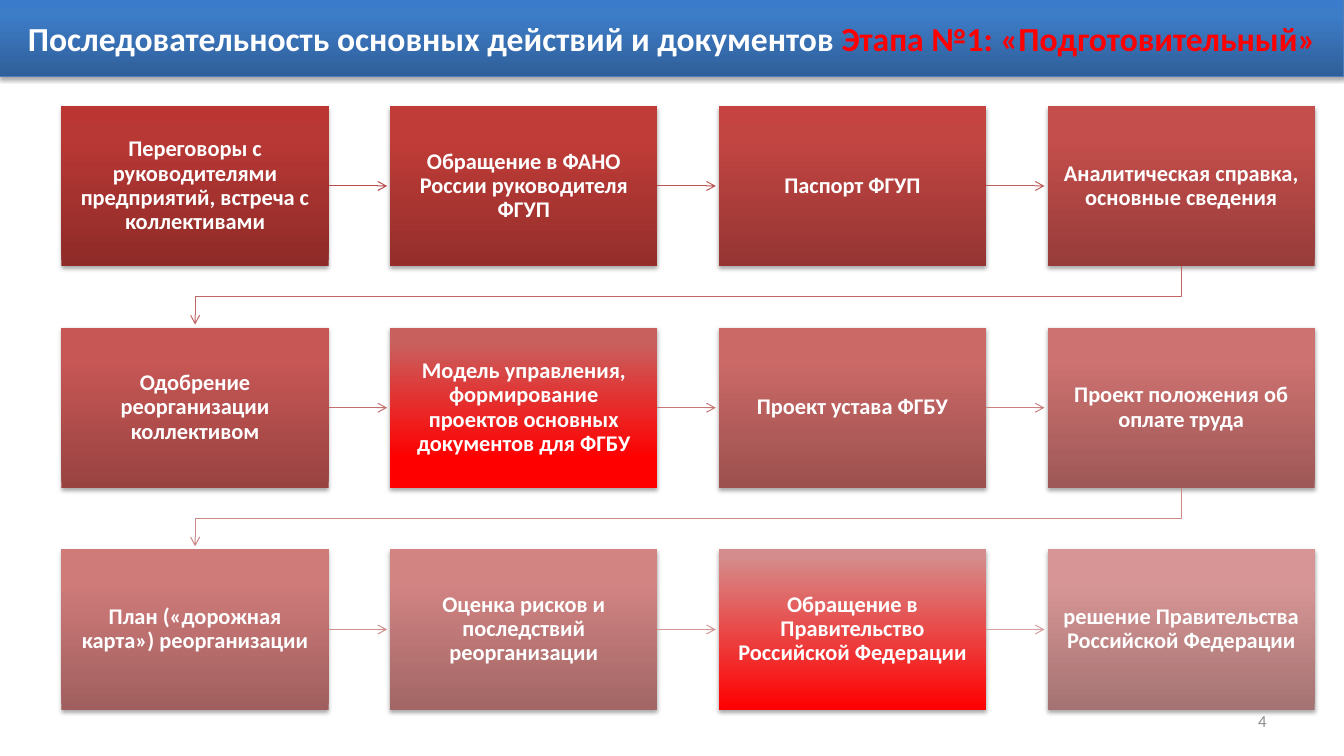
from lxml import etree
from pptx import Presentation, util as u
from pptx.dml.color import RGBColor
from pptx.enum import shapes, text
from pptx.oxml.ns import qn

COLORS = {"white": "FFFFFF", "accent": "FF0000", "border": "4B7EBC",
          "number": "8C8C8C", "shadow": "000000"}
HEADING = [("Последовательность основных действий и документов ", "white"),
           ("Этапа №1: «Подготовительный»", "accent")]
HEADING_FILL = [(0, "2F5F99"), (80, "3D7CC7"), (100, "3A7CCB")]
PAGE_NUMBER = "4"

STEPS = [
    ("Переговоры с руководителями предприятий, встреча с коллективами",
     [(0, "8E2B28"), (80, "B83835"), (100, "BB3632")], "B74C4A"),
    ("Обращение в ФАНО России руководителя ФГУП",
     [(0, "942E2B"), (80, "C03C38"), (100, "C33936")], "BA5552"),
    ("Паспорт ФГУП",
     [(0, "953533"), (80, "C24542"), (100, "C54340")], "BD5E5B"),
    ("Аналитическая справка, основные сведения",
     [(0, "973C3A"), (80, "C44E4B"), (100, "C74C49")], "C06664"),
    ("Одобрение реорганизации коллективом",
     [(0, "994341"), (80, "C65755"), (100, "C95553")], "C36F6D"),
    ("Модель управления, формирование проектов основных документов для ФГБУ",
     [(18, COLORS["accent"]), (91, "C8605E"), (100, "CB5F5C")], "C67776"),
    ("Проект устава ФГБУ",
     [(0, "9C514F"), (80, "CB6967"), (100, "CD6866")], "C9807E"),
    ("Проект положения об оплате труда",
     [(0, "9E5857"), (80, "CD7270"), (100, "D0716F")], "CC8887"),
    ("План («дорожная карта») реорганизации",
     [(0, "A05F5E"), (80, "CF7B7A"), (100, "D27A79")], "CF9190"),
    ("Оценка рисков и последствий реорганизации",
     [(0, "A16665"), (80, "D28483"), (100, "D48382")], "D29998"),
    ("Обращение в Правительство Российской Федерации",
     [(0, COLORS["accent"]), (96, "D48D8C"), (100, "D68C8B")], "D6A1A1"),
    ("решение Правительства Российской Федерации",
     [(0, "A57373"), (80, "D79695"), (100, "D99594")], None),
]

WIDTH, HEIGHT = 13.33, 7.5
COLUMNS = 4
LEFT, TOP = 0.61, 1.05
BOX_W, BOX_H = 2.65, 1.59
STEP_X, STEP_Y = 3.26, 2.2
GAP_X, GAP_Y = STEP_X - BOX_W, STEP_Y - BOX_H
ARROW_CLEARANCE = 0.03

deck = Presentation()
deck.slide_width, deck.slide_height = u.Inches(WIDTH), u.Inches(HEIGHT)
slide = deck.slides.add_slide(deck.slide_layouts[6])


def inches(*values):
    return [u.Inches(value) for value in values]


def write(holder, runs, size, bold, align, inset=None, spacing=None):
    frame = holder.text_frame
    frame.word_wrap = True
    frame.vertical_anchor = text.MSO_ANCHOR.MIDDLE
    if inset is not None:
        frame.margin_left = frame.margin_right = u.Inches(inset)
        frame.margin_top = frame.margin_bottom = u.Inches(inset)
    paragraph = frame.paragraphs[0]
    paragraph.alignment = align
    if spacing:
        paragraph.line_spacing = spacing
    for words, color in runs:
        run = paragraph.add_run()
        run.text = words
        run.font.name, run.font.size, run.font.bold = "Calibri", u.Pt(size), bold
        run.font.color.rgb = RGBColor.from_string(COLORS[color])


def add_panel(place, stops):
    panel = slide.shapes.add_shape(shapes.MSO_SHAPE.RECTANGLE, *inches(*place))
    panel.fill.gradient()
    panel.fill.gradient_angle = 90
    panel.line.fill.background()
    panel.shadow.inherit = False
    properties = panel.element.spPr
    stop_list = properties.find(qn("a:gradFill")).find(qn("a:gsLst"))
    for stop in list(stop_list):
        stop_list.remove(stop)
    for position, color in stops:
        stop = etree.SubElement(stop_list, qn("a:gs"), pos=str(position * 1000))
        etree.SubElement(stop, qn("a:srgbClr"), val=color)
    shadow = etree.SubElement(properties.find(qn("a:effectLst")), qn("a:outerShdw"),
                              blurRad=str(u.Pt(3.1)), dist=str(u.Pt(1.8)),
                              dir="5400000", rotWithShape="0")
    tint = etree.SubElement(shadow, qn("a:srgbClr"), val=COLORS["shadow"])
    etree.SubElement(tint, qn("a:alpha"), val="35000")
    return panel


def style_arrow(arrow, color):
    arrow.line.color.rgb = RGBColor.from_string(color)
    arrow.line.width = u.Pt(0.75)
    properties = arrow.element.spPr
    etree.SubElement(properties.find(qn("a:ln")), qn("a:tailEnd"), type="arrow")
    etree.SubElement(properties, qn("a:effectLst"))


def add_next_arrow(box, x, y, color):
    start, middle = x + BOX_W, y + BOX_H / 2
    arrow = slide.shapes.add_connector(
        shapes.MSO_CONNECTOR.STRAIGHT,
        *inches(start, middle, start + GAP_X - ARROW_CLEARANCE, middle))
    arrow.begin_connect(box, 3)
    style_arrow(arrow, color)


def add_return_arrow(x, y, color):
    start, end = x + BOX_W / 2, LEFT + BOX_W / 2
    bottom = y + BOX_H
    bend, tip = bottom + GAP_Y / 2, bottom + GAP_Y - ARROW_CLEARANCE
    outline = slide.shapes.build_freeform(*inches(start, bottom))
    outline.add_line_segments(
        [inches(start, bend), inches(end, bend), inches(end, tip)], close=False)
    arrow = outline.convert_to_shape()
    arrow.fill.background()
    style_arrow(arrow, color)


heading = add_panel((0, 0, WIDTH, 0.76), HEADING_FILL)
heading.line.color.rgb = RGBColor.from_string(COLORS["border"])
heading.line.width = u.Pt(0.75)
write(heading, HEADING, 24, True, text.PP_ALIGN.CENTER)

for index, (action, stops, arrow_color) in enumerate(STEPS):
    row, column = divmod(index, COLUMNS)
    x, y = LEFT + column * STEP_X, TOP + row * STEP_Y
    box = add_panel((x, y, BOX_W, BOX_H), stops)
    write(box, [(action, "white")], 16, True, text.PP_ALIGN.CENTER, 0.12, 0.9)
    if arrow_color and column < COLUMNS - 1:
        add_next_arrow(box, x, y, arrow_color)
    elif arrow_color:
        add_return_arrow(x, y, arrow_color)

page_number = slide.shapes.add_textbox(*inches(9.55, 6.95, 3.11, 0.4))
write(page_number, [(PAGE_NUMBER, "number")], 12, False, text.PP_ALIGN.RIGHT)

deck.save("out.pptx")
